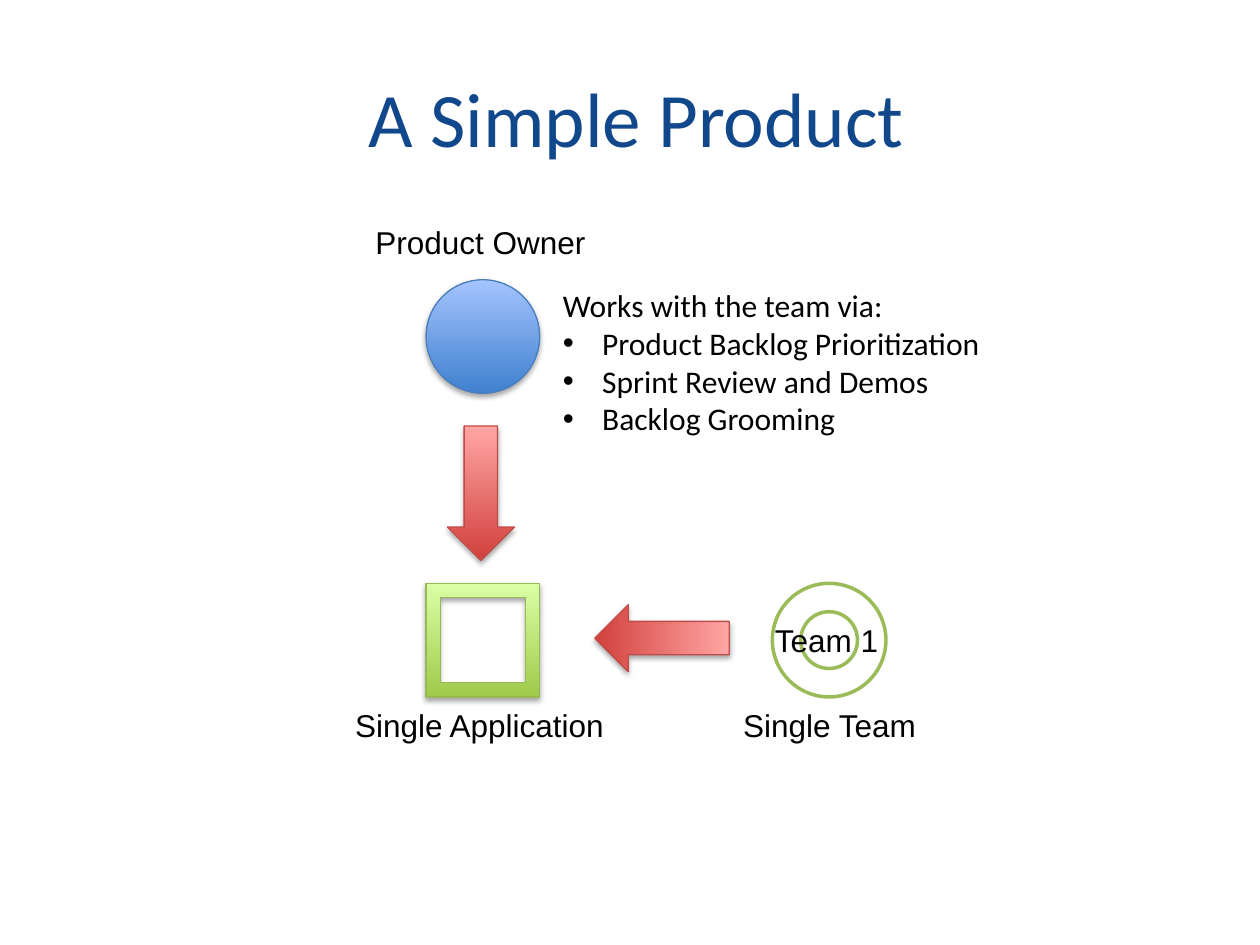
from lxml import etree
from pptx import Presentation
from pptx.dml.color import RGBColor
from pptx.enum import shapes, text
from pptx.oxml import ns
from pptx.util import Cm, Pt

NAVY = RGBColor(0x11, 0x48, 0x8B)
BLACK = RGBColor(0, 0, 0)
WHITE = RGBColor(0xFF, 0xFF, 0xFF)
TEAM_GREEN = RGBColor(0x9B, 0xBB, 0x59)
# Each palette holds the bottom colour, the top colour and the outline
BLUES = RGBColor(0x3F, 0x80, 0xCE), RGBColor(0xA4, 0xC4, 0xFF), RGBColor(0x4B, 0x7E, 0xBC)
GREENS = RGBColor(0xA0, 0xCA, 0x4A), RGBColor(0xDA, 0xFF, 0xA5), RGBColor(0x98, 0xB9, 0x55)
REDS = RGBColor(0xD1, 0x40, 0x3C), RGBColor(0xFF, 0xA6, 0xA5), RGBColor(0xBF, 0x4C, 0x48)

SYMBOL = 2.29
ARROW_WIDTH, ARROW_LENGTH = 1.35, 2.71
OWNER_X, TEAM_X = 8.59, 15.57
OWNER_Y, PRODUCT_Y = 5.64, 11.76
CAPTION_Y = 14.1
LABEL_HEIGHT = 1.03
BULLET_INDENT = Cm(0.79)


def add_symbol(slide, kind, left, top, width=SYMBOL, height=SYMBOL):
    symbol = slide.shapes.add_shape(kind, Cm(left), Cm(top), Cm(width), Cm(height))
    symbol.shadow.inherit = False
    return symbol


def add_soft_shadow(symbol):
    effects = symbol._element.spPr.find(ns.qn("a:effectLst"))
    shadow = etree.SubElement(effects, ns.qn("a:outerShdw"), blurRad="40000",
                              dist="23000", dir="5400000", rotWithShape="0")
    colour = etree.SubElement(shadow, ns.qn("a:srgbClr"), val="000000")
    etree.SubElement(colour, ns.qn("a:alpha"), val="35000")


def style_glossy(symbol, palette):
    """Give a symbol a vertical gradient, a thin outline and a soft shadow."""
    *gradient, outline = palette
    symbol.fill.gradient()
    symbol.fill.gradient_angle = 90
    for stop, colour in zip(symbol.fill.gradient_stops, gradient):
        stop.color.rgb = colour
    symbol.line.color.rgb = outline
    symbol.line.width = Pt(0.75)
    add_soft_shadow(symbol)


def add_arrow(slide, left, top, rotation=0):
    arrow = add_symbol(slide, shapes.MSO_SHAPE.DOWN_ARROW, left, top,
                       ARROW_WIDTH, ARROW_LENGTH)
    arrow.rotation = rotation
    style_glossy(arrow, REDS)


def add_team_ring(slide):
    ring = add_symbol(slide, shapes.MSO_SHAPE.DONUT, TEAM_X, PRODUCT_Y)
    ring.fill.solid()
    ring.fill.fore_color.rgb = WHITE
    ring.line.color.rgb = TEAM_GREEN
    ring.line.width = Pt(2)


def add_run(paragraph, words, font, size=18, colour=BLACK):
    run = paragraph.add_run()
    run.text = words
    run.font.name = font
    run.font.size = Pt(size)
    run.font.color.rgb = colour


def add_text_frame(slide, left, top, width, height):
    """Add an unwrapped text box that grows with its text."""
    frame = slide.shapes.add_textbox(Cm(left), Cm(top), Cm(width), Cm(height)).text_frame
    frame.word_wrap = False
    frame.auto_size = text.MSO_AUTO_SIZE.SHAPE_TO_FIT_TEXT
    return frame


def add_label(slide, words, left, top, width):
    frame = add_text_frame(slide, left, top, width, LABEL_HEIGHT)
    add_run(frame.paragraphs[0], words, "Arial")


def add_title(slide, words):
    frame = add_text_frame(slide, 0.84, 0.76, 23.98, 3.18)
    frame.word_wrap = True
    frame.auto_size = text.MSO_AUTO_SIZE.NONE
    frame.vertical_anchor = text.MSO_ANCHOR.MIDDLE
    heading = frame.paragraphs[0]
    heading.alignment = text.PP_ALIGN.CENTER
    add_run(heading, words, "Calibri", 44, NAVY)


def add_bulleted_list(slide, lead, items, left, top, width, height):
    frame = add_text_frame(slide, left, top, width, height)
    add_run(frame.paragraphs[0], lead, "Calibri")
    for item in items:
        paragraph = frame.add_paragraph()
        properties = paragraph._p.get_or_add_pPr()
        properties.set("marL", str(BULLET_INDENT))
        properties.set("indent", str(-BULLET_INDENT))
        etree.SubElement(properties, ns.qn("a:buFont"), typeface="Arial")
        etree.SubElement(properties, ns.qn("a:buChar"), char="•")
        add_run(paragraph, item, "Calibri")


def main():
    deck = Presentation()
    deck.slide_width, deck.slide_height = Cm(25.4), Cm(19.05)
    slide = deck.slides.add_slide(deck.slide_layouts[6])

    add_title(slide, "A Simple Product")
    owner = add_symbol(slide, shapes.MSO_SHAPE.OVAL, OWNER_X, OWNER_Y)
    style_glossy(owner, BLUES)
    application = add_symbol(slide, shapes.MSO_SHAPE.FRAME, OWNER_X, PRODUCT_Y)
    style_glossy(application, GREENS)
    add_arrow(slide, 9.02, 8.59)
    add_arrow(slide, 12.67, 11.51, rotation=90)
    add_team_ring(slide)

    for words, left, top, width in (
        ("Product Owner", 7.32, 4.37, 4.8),
        ("Single Application", 6.91, CAPTION_Y, 5.56),
        ("Team 1", 15.37, 12.4, 2.62),
        ("Single Team", 14.73, CAPTION_Y, 4.04),
    ):
        add_label(slide, words, left, top, width)

    add_bulleted_list(
        slide, "Works with the team via:",
        ("Product Backlog Prioritization", "Sprint Review and Demos", "Backlog Grooming"),
        11.1, OWNER_Y, 8.97, 3.33)
    deck.save("out.pptx")


if __name__ == "__main__":
    main()
